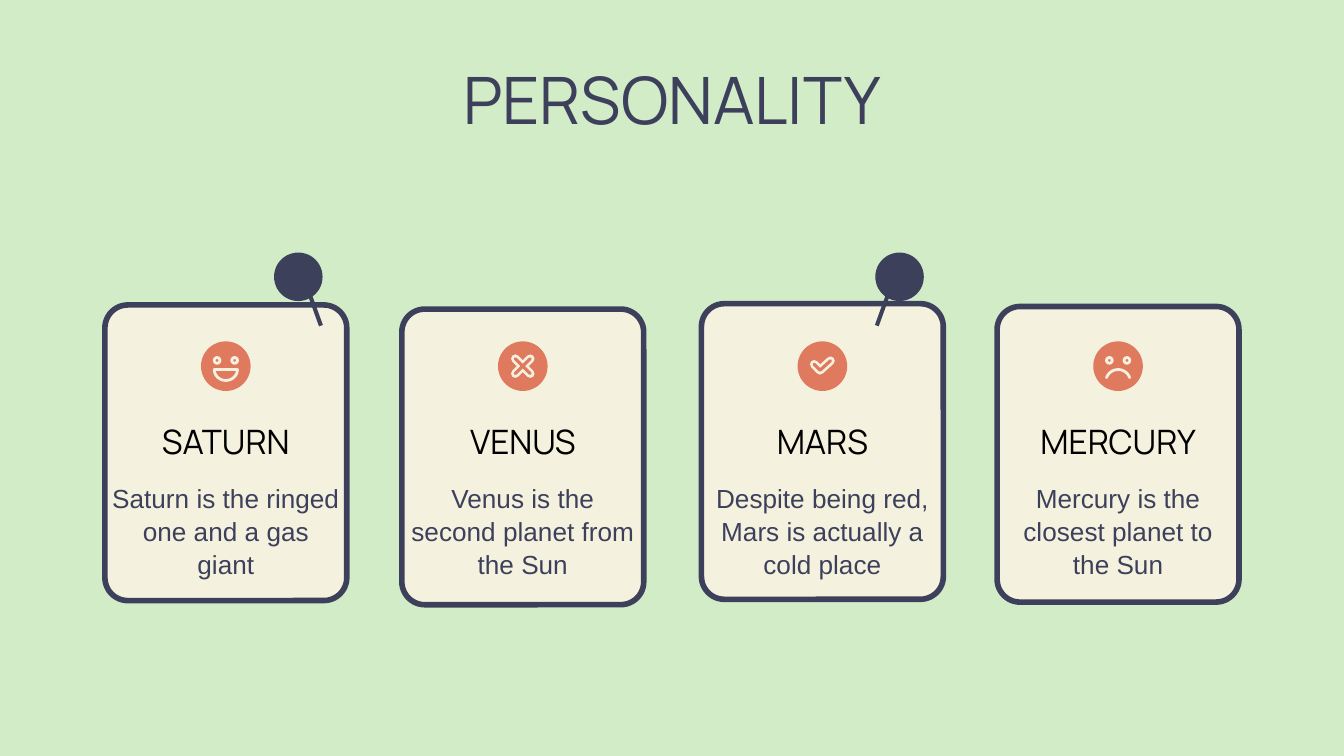
from math import cos, radians, sin

from pptx import Presentation
from pptx.dml.color import RGBColor
from pptx.enum.shapes import MSO_SHAPE
from pptx.enum.text import MSO_ANCHOR, PP_ALIGN
from pptx.util import Pt

ROUNDED = MSO_SHAPE.ROUNDED_RECTANGLE
RECTANGLE = MSO_SHAPE.RECTANGLE
OVAL = MSO_SHAPE.OVAL
TOP, MIDDLE = MSO_ANCHOR.TOP, MSO_ANCHOR.MIDDLE
CENTER = PP_ALIGN.CENTER

# Content
TITLE = "PERSONALITY"
# name, description, icon, card left, card top
CARDS = [
    ("SATURN", "Saturn is the ringed one and a gas giant", "smile", 56.2, 163.4),
    ("VENUS", "Venus is the second planet from the Sun", "cross", 215.3, 165.6),
    ("MARS", "Despite being red, Mars is actually a cold place", "check", 375.8, 162.7),
    ("MERCURY", "Mercury is the closest planet to the Sun", "frown", 534.2, 164.2),
]
# needle centre, head centre, lean in degrees
PINS = [(165.4, 159.8, 340.2), (476.3, 481.9, 19.8)]

GREEN, CREAM, NAVY, CORAL, BLACK = "D2ECC8", "F4F1DE", "3D405B", "E07A5F", "000000"
TITLE_STYLE = {"name": "Manrope", "size": Pt(35)}
NAME_STYLE = {"name": "Manrope", "size": Pt(18)}
BODY_STYLE = {"name": "Arial", "size": Pt(14)}

CARD_WIDTH, CARD_HEIGHT = 129.6, 158.4
ICON_Y, ICON_SIZE = 196.2, 26.6
NEEDLE_Y, NEEDLE_WIDTH, NEEDLE_LENGTH = 156.2, 2.2, 38.9
HEAD_Y, HEAD_SIZE = 148.3, 26


def arc(center_y, radius_x, radius_y, start, end):
    """Points on an arc; angles run clockwise from the right."""
    angles = [radians(start + (end - start) * step / 24) for step in range(25)]
    return [(radius_x * cos(a), center_y + radius_y * sin(a)) for a in angles]


# Icon strokes, measured from the icon centre
MOUTHS = {
    "smile": (arc(1.8, 6.2, 5.8, 0, 180), True),
    "frown": (arc(8.4, 6.6, 6.6, 200, 340), False),
}
MARKS = {
    "cross": [[(-4, -4), (4, 4)], [(-4, 4), (4, -4)]],
    "check": [[(-4.4, -1), (-1.3, 2.2), (4.3, -2.9)]],
}
EYE_X, EYE_Y, EYE_SIZE = 4.7, -3.1, 3.1

presentation = Presentation()
presentation.slide_width, presentation.slide_height = Pt(720), Pt(405)
slide = presentation.slides.add_slide(presentation.slide_layouts[6])


def color(hex_value):
    return RGBColor.from_string(hex_value)


def paint(shape, fill=None, line=None, line_width=1.5):
    shape.shadow.inherit = False
    if fill:
        shape.fill.solid()
        shape.fill.fore_color.rgb = color(fill)
    else:
        shape.fill.background()
    if line:
        shape.line.color.rgb = color(line)
        shape.line.width = Pt(line_width)
    else:
        shape.line.fill.background()


def add_centered(kind, x, y, width, height, **look):
    shape = slide.shapes.add_shape(
        kind, Pt(x - width / 2), Pt(y - height / 2), Pt(width), Pt(height))
    paint(shape, **look)
    return shape


def add_stroke(points, x, y, closed, **look):
    corners = [(Pt(x + dx), Pt(y + dy)) for dx, dy in points]
    builder = slide.shapes.build_freeform(*corners[0])
    builder.add_line_segments(corners[1:], close=closed)
    shape = builder.convert_to_shape()
    paint(shape, **look)
    outline = shape.line._get_or_add_ln()
    outline.set("cap", "rnd")


def add_text(text, left, top, width, height, style, hex_value, anchor=TOP, spacing=1.0):
    frame = slide.shapes.add_textbox(Pt(left), Pt(top), Pt(width), Pt(height)).text_frame
    settings = {"word_wrap": True, "vertical_anchor": anchor, "margin_left": 0,
                "margin_right": 0, "margin_top": 0, "margin_bottom": 0}
    for name, value in settings.items():
        setattr(frame, name, value)
    paragraph = frame.paragraphs[0]
    paragraph.alignment = CENTER
    paragraph.line_spacing = spacing
    run = paragraph.add_run()
    run.text = text
    for name, value in style.items():
        setattr(run.font, name, value)
    run.font.color.rgb = color(hex_value)


def add_icon(icon, x, y):
    add_centered(OVAL, x, y, ICON_SIZE, ICON_SIZE, fill=CORAL)
    if icon in MOUTHS:
        for side in (-1, 1):
            add_centered(OVAL, x + side * EYE_X, y + EYE_Y, EYE_SIZE, EYE_SIZE,
                         fill=CORAL, line=CREAM)
        points, closed = MOUTHS[icon]
        add_stroke(points, x, y, closed, line=CREAM)
    else:
        # A wide cream stroke under a narrow coral one leaves an outline
        for hex_value, width in ((CREAM, 4.6), (CORAL, 1.7)):
            for points in MARKS[icon]:
                add_stroke(points, x, y, False, line=hex_value, line_width=width)


# Background and title
slide.background.fill.solid()
slide.background.fill.fore_color.rgb = color(GREEN)
add_text(TITLE, 56.2, 35.3, 607.7, 45.4, TITLE_STYLE, NAVY, spacing=0.94)

# Cards
for name, description, icon, left, top in CARDS:
    middle = left + CARD_WIDTH / 2
    card = add_centered(ROUNDED, middle, top + CARD_HEIGHT / 2, CARD_WIDTH, CARD_HEIGHT,
                        fill=CREAM, line=NAVY, line_width=3)
    card.adjustments[0] = 0.095
    add_icon(icon, middle, ICON_Y)
    add_text(name, middle - 63, 219.6, 126, 33.1, NAME_STYLE, BLACK, anchor=MIDDLE)
    add_text(description, middle - 61.2, 257.8, 122.4, 66.2, BODY_STYLE, NAVY, spacing=1.05)

# Pins
for needle_x, head_x, lean in PINS:
    needle = add_centered(RECTANGLE, needle_x, NEEDLE_Y, NEEDLE_WIDTH, NEEDLE_LENGTH, fill=NAVY)
    needle.rotation = lean
    add_centered(OVAL, head_x, HEAD_Y, HEAD_SIZE, HEAD_SIZE, fill=NAVY)

presentation.save("out.pptx")
